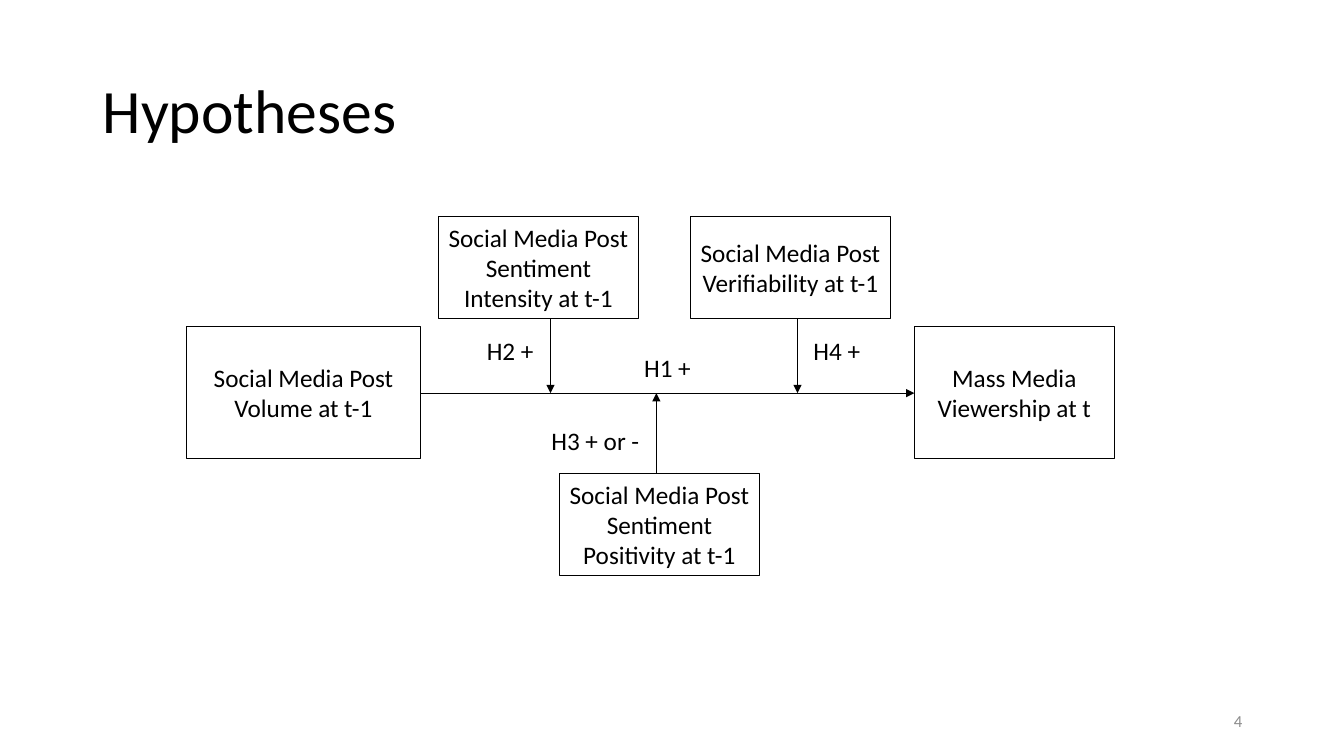
from dataclasses import dataclass

from lxml.etree import SubElement
from pptx import Presentation
from pptx.dml.color import RGBColor
from pptx.enum.shapes import MSO_CONNECTOR, MSO_SHAPE
from pptx.enum.text import MSO_ANCHOR, PP_ALIGN
from pptx.oxml.ns import qn
from pptx.util import Pt

SCALE = 9144


@dataclass(frozen=True)
class Theme:
    """Colours, font and type sizes of the slide."""
    font: str = "Calibri"
    ink: RGBColor = RGBColor(0, 0, 0)
    grey: RGBColor = RGBColor(0x8C, 0x8C, 0x8C)
    title: int = 44
    body: int = 18
    small: int = 12
    edge: float = 0.75
    arrow: float = 0.5


THEME = Theme()


def px(*sizes):
    """Turn px lengths into EMU."""
    return [size * SCALE for size in sizes]


def write(shape, text, size=THEME.body, color=THEME.ink, align=PP_ALIGN.LEFT, wrap=True):
    """Set one styled run, centred vertically, and return its paragraph."""
    frame = shape.text_frame
    frame.word_wrap = wrap
    frame.vertical_anchor = MSO_ANCHOR.MIDDLE
    para = frame.paragraphs[0]
    para.alignment = align
    run = para.add_run()
    run.text = text
    run.font.name = THEME.font
    run.font.size = Pt(size)
    run.font.color.rgb = color
    return para


def add_text(slide, place, text, **style):
    """Add a text box and return its paragraph."""
    return write(slide.shapes.add_textbox(*px(*place)), text, **style)


def add_box(slide, place, text):
    """Add an outlined box for one variable."""
    box = slide.shapes.add_shape(MSO_SHAPE.RECTANGLE, *px(*place))
    box.shadow.inherit = False
    box.fill.background()
    box.line.color.rgb = THEME.ink
    box.line.width = Pt(THEME.edge)
    write(box, text, align=PP_ALIGN.CENTER)


def add_arrow(slide, start, end):
    """Add a straight arrow from start to end."""
    arrow = slide.shapes.add_connector(MSO_CONNECTOR.STRAIGHT, *px(*start, *end))
    arrow.line.color.rgb = THEME.ink
    arrow.line.width = Pt(THEME.arrow)
    SubElement(arrow.line._get_or_add_ln(), qn("a:tailEnd"), type="triangle")
    SubElement(arrow._element.spPr, qn("a:effectLst"))


def main():
    """Build the slide and save it."""
    deck = Presentation()
    deck.slide_width, deck.slide_height = px(1333, 750)
    slide = deck.slides.add_slide(deck.slide_layouts[6])

    title = add_text(slide, (92, 40, 1150, 145), "Hypotheses", size=THEME.title)
    title.line_spacing = 0.9

    wide, high = 198, 101
    top, low, axis = 215, 470, 390
    boxes = [
        ((185, 324, 232, 131), "Social Media Post Volume at t-1"),
        ((907, 324, wide, 131), "Mass Media Viewership at t"),
        ((685, top, wide, high), "Social Media Post Verifiability at t-1"),
        ((555, low, wide, high), "Social Media Post Sentiment Positivity at t-1"),
        ((435, top, wide, high), "Social Media Post Sentiment Intensity at t-1"),
    ]
    for place, text in boxes:
        add_box(slide, place, text)

    add_arrow(slide, (417, axis), (907, axis))
    for x, y in [(546, top + high), (791, top + high), (651, low)]:
        add_arrow(slide, (x, y), (x, axis))

    labels = [
        (629, 345, 67, "H1 +"),
        (537, 417, 109, "H3 + or -"),
        (473, 328, 67, "H2 +"),
        (797, 328, 67, "H4 +"),
    ]
    for x, y, width, text in labels:
        add_text(slide, (x, y, width, 40), text, wrap=False)

    add_text(slide, (942, 695, 300, 40), "4", size=THEME.small,
             color=THEME.grey, align=PP_ALIGN.RIGHT)
    deck.save("out.pptx")


if __name__ == "__main__":
    main()
